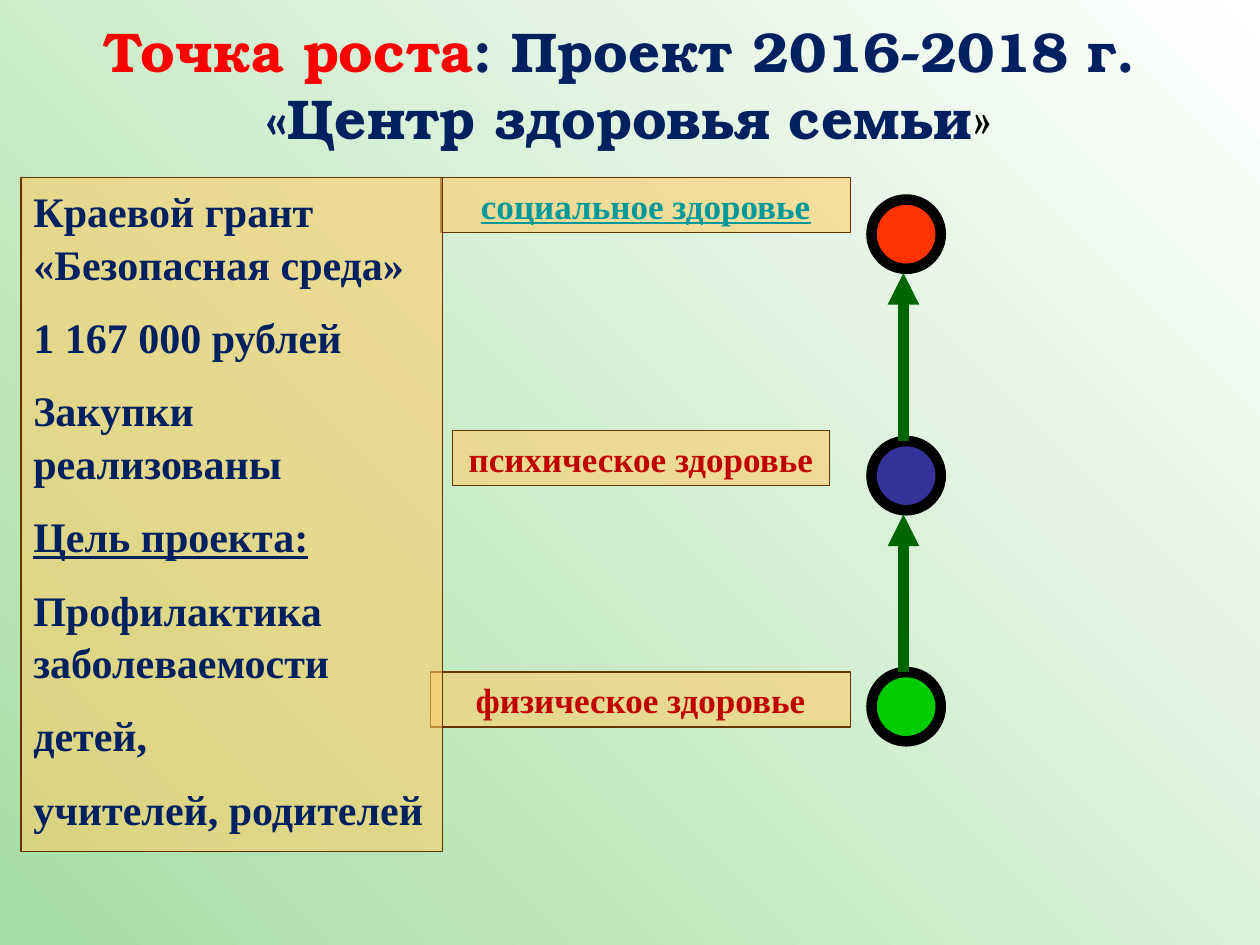
from dataclasses import dataclass

from lxml.etree import SubElement
from pptx import Presentation
from pptx.dml.color import RGBColor
from pptx.enum.shapes import MSO_CONNECTOR, MSO_SHAPE
from pptx.enum.text import MSO_ANCHOR, PP_ALIGN
from pptx.oxml.ns import qn
from pptx.util import Pt


@dataclass(frozen=True)
class Theme:
    title_font: str = "TeX Gyre Bonum"
    text_font: str = "Times New Roman"
    title_size: int = 32
    panel_size: int = 24
    label_size: int = 20
    bg_start: str = "A5DEA2"
    bg_end: str = "FFFFFF"
    navy: str = "002060"
    red: str = "FF0000"
    black: str = "000000"
    dark_red: str = "C00000"
    teal: str = "009999"
    sand: str = "FFCC66"
    brown: str = "663300"
    arrow: str = "006600"
    sand_alpha: int = 57
    thick: int = 6
    thin: float = 0.75


@dataclass(frozen=True)
class Stage:
    """One health level: its label box and its circle."""
    text: str
    text_color: str
    left: float
    top: float
    width: float
    circle_top: float
    circle_color: str
    underline: bool = False


@dataclass(frozen=True)
class Arrow:
    start_y: float
    end_y: float


T = Theme()
CIRCLE_LEFT, CIRCLE_SIZE, ARROW_X = 498, 39.6, 516.25
LABEL_HEIGHT = 31.5

STAGES = [
    Stage("физическое здоровье", T.dark_red, 246, 384, 240, 384, "00CC00"),
    Stage("психическое здоровье", T.dark_red, 258.5, 246, 215.5, 252, "333399"),
    Stage("социальное здоровье", T.teal, 252, 101.5, 234, 114, "FF3300", True),
]
ARROWS = [Arrow(384, 294), Arrow(252, 156)]
PANEL_LINES = [
    "Краевой грант «Безопасная среда»",
    "1 167 000 рублей",
    "Закупки реализованы",
    "Цель проекта:",
    "Профилактика заболеваемости",
    "детей,",
    "учителей, родителей",
]
UNDERLINED_LINE = "Цель проекта:"


def rgb(color: str) -> RGBColor:
    return RGBColor.from_string(color)


def add_run(p, text: str, font: str, size: float, color: str,
            bold: bool = True, underline: bool = False) -> None:
    r = p.add_run()
    r.text = text
    r.font.name = font
    r.font.size = Pt(size)
    r.font.bold = bold
    r.font.underline = underline
    r.font.color.rgb = rgb(color)


def set_background(s) -> None:
    fill = s.background.fill
    fill.gradient()
    fill.gradient_angle = 45
    for stop, color, position in zip(fill.gradient_stops, (T.bg_start, T.bg_end), (0, 1)):
        stop.color.rgb = rgb(color)
        stop.position = position


def add_title(s) -> None:
    sp = s.shapes.title
    sp.left, sp.top, sp.width, sp.height = Pt(16.5), Pt(0), Pt(686), Pt(96)
    tf = sp.text_frame
    tf.vertical_anchor = MSO_ANCHOR.MIDDLE
    p = tf.paragraphs[0]
    p.alignment = PP_ALIGN.CENTER
    add_run(p, "Точка роста", T.title_font, T.title_size, T.red)
    add_run(p, ": Проект 2016-2018 г. ", T.title_font, T.title_size, T.navy)
    p.add_line_break()
    add_run(p, "«Центр здоровья семьи", T.title_font, T.title_size, T.navy)
    add_run(p, "»", T.title_font, T.title_size, T.black, bold=False)


def add_outlined(s, kind: MSO_SHAPE, left: float, top: float, width: float,
                 height: float, fill: str, line: str, weight: float):
    sp = s.shapes.add_shape(kind, Pt(left), Pt(top), Pt(width), Pt(height))
    sp.shadow.inherit = False
    sp.fill.solid()
    sp.fill.fore_color.rgb = rgb(fill)
    sp.line.color.rgb = rgb(line)
    sp.line.width = Pt(weight)
    return sp


def add_sand_box(s, left: float, top: float, width: float, height: float,
                 anchor: MSO_ANCHOR):
    """Add a see-through sand box and return its text frame."""
    sp = add_outlined(s, MSO_SHAPE.RECTANGLE, left, top, width, height,
                      T.sand, T.brown, T.thin)
    color = sp.fill._xPr.find(qn("a:solidFill"))[0]
    SubElement(color, qn("a:alpha"), val=str(T.sand_alpha * 1000))
    tf = sp.text_frame
    tf.word_wrap = True
    tf.vertical_anchor = anchor
    return tf


def add_circle(s, stage: Stage) -> None:
    add_outlined(s, MSO_SHAPE.OVAL, CIRCLE_LEFT, stage.circle_top, CIRCLE_SIZE,
                 CIRCLE_SIZE, stage.circle_color, T.black, T.thick)


def add_arrow(s, arrow: Arrow) -> None:
    cn = s.shapes.add_connector(MSO_CONNECTOR.STRAIGHT, Pt(ARROW_X), Pt(arrow.start_y),
                                Pt(ARROW_X), Pt(arrow.end_y))
    cn.line.color.rgb = rgb(T.arrow)
    cn.line.width = Pt(T.thick)
    SubElement(cn.line._get_or_add_ln(), qn("a:tailEnd"), type="triangle")
    SubElement(cn._element.spPr, qn("a:effectLst"))


def add_label(s, stage: Stage) -> None:
    tf = add_sand_box(s, stage.left, stage.top, stage.width, LABEL_HEIGHT,
                      MSO_ANCHOR.MIDDLE)
    p = tf.paragraphs[0]
    p.alignment = PP_ALIGN.CENTER
    add_run(p, stage.text, T.text_font, T.label_size, stage.text_color,
            underline=stage.underline)


def add_panel(s) -> None:
    tf = add_sand_box(s, 12, 101.5, 241, 385, MSO_ANCHOR.TOP)
    for i, text in enumerate(PANEL_LINES):
        p = tf.add_paragraph() if i else tf.paragraphs[0]
        p.alignment = PP_ALIGN.LEFT
        p.line_spacing = 1.04
        if i:
            p.space_before = Pt(T.panel_size / 2)
        add_run(p, text, T.text_font, T.panel_size, T.navy,
                underline=text == UNDERLINED_LINE)


def main() -> None:
    prs = Presentation()
    prs.slide_width, prs.slide_height = Pt(720), Pt(540)
    s = prs.slides.add_slide(prs.slide_layouts[5])
    set_background(s)
    add_title(s)
    for stage in STAGES:
        add_circle(s, stage)
    for arrow in ARROWS:
        add_arrow(s, arrow)
    for stage in STAGES:
        add_label(s, stage)
    add_panel(s)
    prs.save("out.pptx")


if __name__ == "__main__":
    main()
